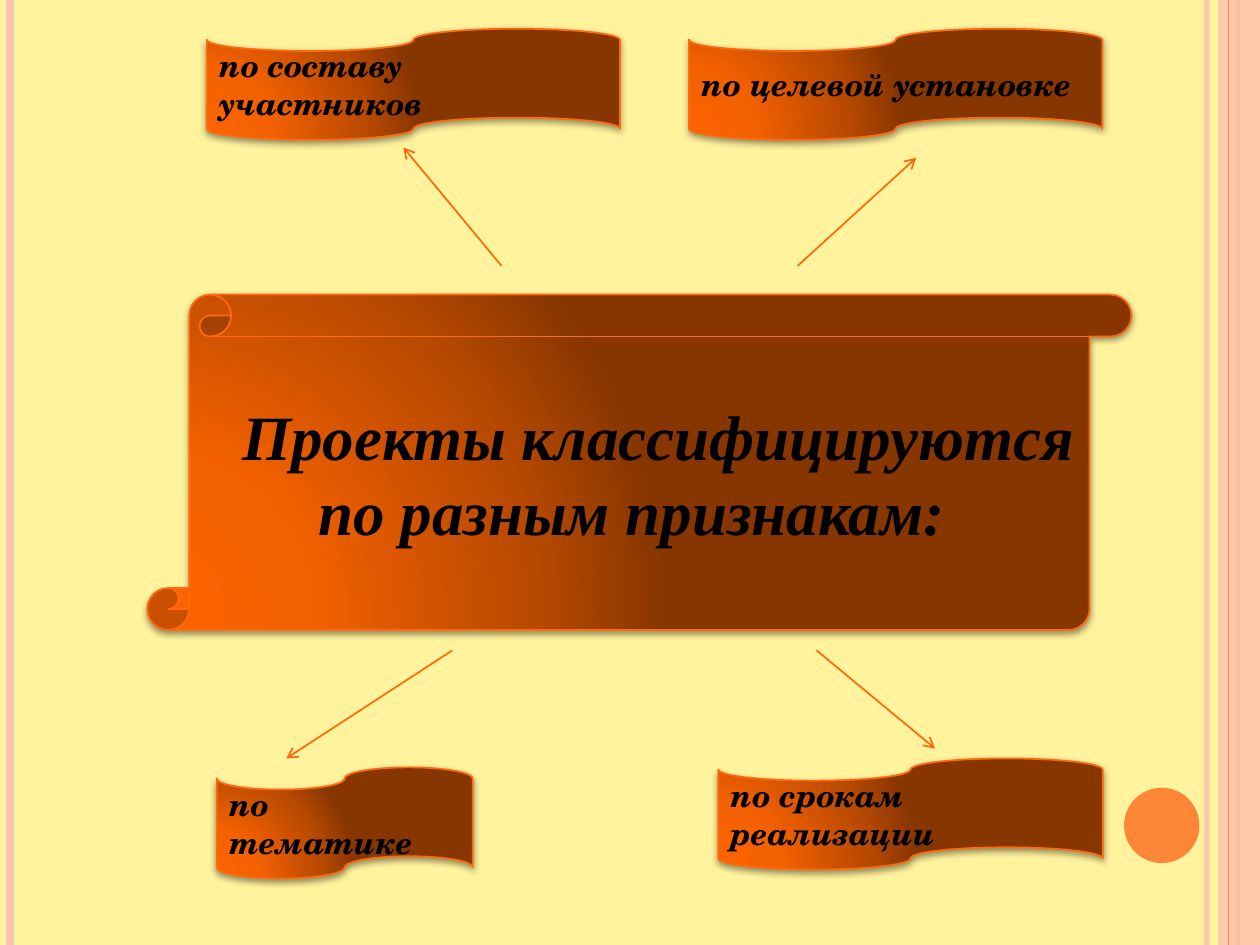
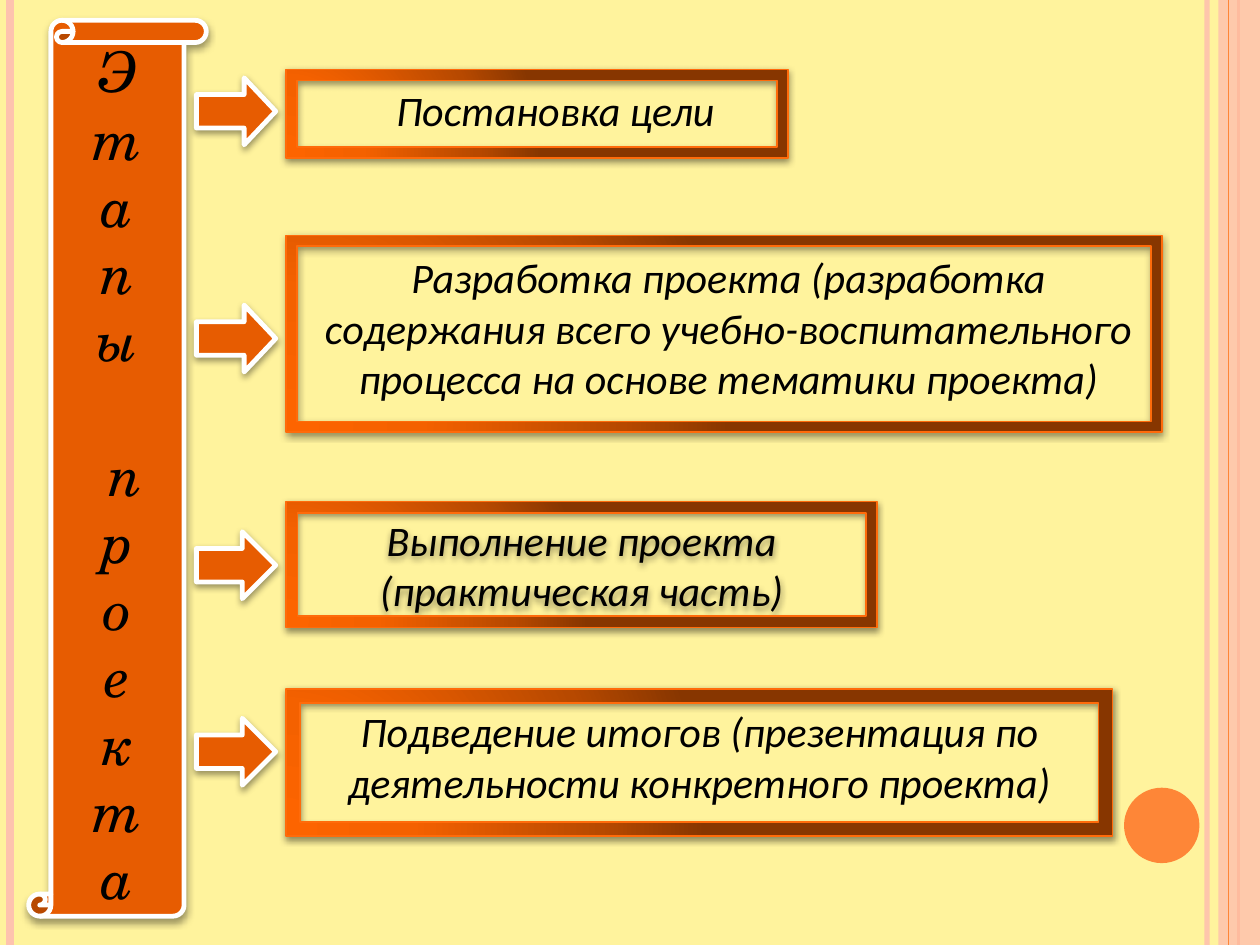
from pptx import Presentation
from pptx.dml.color import RGBColor
from pptx.enum.shapes import MSO_CONNECTOR, MSO_SHAPE
from pptx.enum.text import MSO_ANCHOR, MSO_AUTO_SIZE, PP_ALIGN
from pptx.oxml import parse_xml
from pptx.oxml.ns import nsdecls, qn
from pptx.util import Cm, Pt

LEFT, CENTER = PP_ALIGN.LEFT, PP_ALIGN.CENTER
MIDDLE, GROW = MSO_ANCHOR.MIDDLE, MSO_AUTO_SIZE.SHAPE_TO_FIT_TEXT
STRAIGHT = MSO_CONNECTOR.STRAIGHT
RECT, OVAL, FRAME = MSO_SHAPE.RECTANGLE, MSO_SHAPE.OVAL, MSO_SHAPE.FRAME
SCROLL, TAPE, ARROW = (MSO_SHAPE.VERTICAL_SCROLL, MSO_SHAPE.FLOWCHART_PUNCHED_TAPE,
                       MSO_SHAPE.RIGHT_ARROW)

# Shared look
WIDTH, HEIGHT = 25.4, 19.05
PAPER, PINK, ORANGE = "FFF39D", "FEC3AE", "FE8637"
EDGE, EMBER, WHITE, BLACK = "FF6B0A", "E75C01", "FFFFFF", "000000"
GLOW = [(0, "FD6400"), (30, "F46100"), (75, "B74900"), (100, "873600")]
SCHOOL, TIMES, CALIBRI = "TeX Gyre Schola", "Times New Roman", "Calibri"

# Slide 1: kinds of projects (lengths in cm)
HEADING = "Проекты классифицируются по разным признакам: "
HEADING_BOX = (2.97, 5.94, 19.84, 6.76)
TAPE_HEIGHT = 2.24
CRITERIA = [  # text, left, top, width
    ("по тематике", 4.37, 15.47, 5.16),
    ("по составу участников", 4.17, 0.58, 8.33),
    ("по целевой установке", 13.89, 0.58, 8.33),
    ("по срокам реализации", 14.48, 15.29, 7.75),
]
POINTERS = [  # from x, y to x, y
    (16.46, 13.11, 18.85, 15.09),
    (9.12, 13.11, 5.77, 15.29),
    (16.08, 5.36, 18.47, 3.18),
    (10.11, 5.36, 8.13, 2.97),
]

# Slide 2: stages of a project
BANNER_WORDS = ["Этапы", "проекта"]
BANNER_BOX = (0.58, 0.41, 3.58, 18.06)
ARROW_LEFT, ARROW_SIZE = 3.96, (1.6, 1.35)
FRAME_LEFT = 5.77
STAGES = [  # text, arrow top, arrow head, frame (top, width, height), border, text box
    ("Постановка цели", 1.57, 0.472, (1.4, 10.11, 1.78), 0.125,
     (5.77, 1.57, 10.85, 1.27)),
    ("Разработка проекта (разработка содержания всего учебно-воспитательного "
     "процесса на основе тематики проекта)", 6.15, 0.472, (4.75, 17.65, 3.96), 0.054,
     (6.15, 4.95, 17.07, 3.33)),
    ("Выполнение проекта (практическая часть)", 10.72, 0.5, (10.11, 11.91, 2.54), 0.089,
     None),
    ("Подведение итогов (презентация по деятельности конкретного проекта)",
     14.48, 0.5, (13.89, 16.66, 2.97), 0.095, (5.77, 14.1, 16.66, 2.31)),
]


def rgb(color):
    return RGBColor.from_string(color)


def set_alpha(sp, percent):
    for clr in sp._element.spPr.iter(qn("a:srgbClr")):
        clr.append(parse_xml(f'<a:alpha {nsdecls("a")} val="{percent * 1000}"/>'))


def add_shadow(sp, alpha, dist):
    sp._element.spPr.append(parse_xml(
        f'<a:effectLst {nsdecls("a")}><a:outerShdw blurRad="{Pt(4)}" dist="{Pt(dist)}" '
        f'dir="5400000" rotWithShape="0"><a:srgbClr val="{BLACK}">'
        f'<a:alpha val="{alpha * 1000}"/></a:srgbClr></a:outerShdw></a:effectLst>'))


def add_shape(s, kind, box, fill, line=None, width=1.0):
    sp = s.shapes.add_shape(kind, *map(Cm, box))
    sp.fill.solid()
    sp.fill.fore_color.rgb = rgb(fill)
    if line:
        sp.line.color.rgb = rgb(line)
        sp.line.width = Pt(width)
    else:
        sp.line.fill.background()
        sp.shadow.inherit = False
    return sp


def add_glowing(s, kind, box):
    """Shape with the dark orange radial gradient and a soft shadow."""
    sp = add_shape(s, kind, box, EMBER, EDGE)
    stops = "".join(f'<a:gs pos="{pos * 1000}"><a:srgbClr val="{c}"/></a:gs>'
                    for pos, c in GLOW)
    spPr = sp._element.spPr
    spPr.replace(spPr.find(qn("a:solidFill")), parse_xml(
        f'<a:gradFill {nsdecls("a")} rotWithShape="1"><a:gsLst>{stops}</a:gsLst>'
        '<a:path path="circle"><a:fillToRect l="5000" t="100000" r="120000" b="10000"/>'
        '</a:path></a:gradFill>'))
    add_shadow(sp, 42, 1.6)
    return sp


def add_outlined(s, kind, box):
    """Flat orange shape with a thick white edge."""
    sp = add_shape(s, kind, box, EMBER, WHITE, 2.75)
    add_shadow(sp, 40, 2)
    return sp


def add_line(s, x1, y1, x2, y2, color, width, arrow=False):
    cn = s.shapes.add_connector(STRAIGHT, *map(Cm, (x1, y1, x2, y2)))
    cn.line.color.rgb = rgb(color)
    cn.line.width = Pt(width)
    if arrow:
        cn.line._ln.append(parse_xml(f'<a:tailEnd {nsdecls("a")} type="arrow"/>'))
    cn._element.spPr.append(parse_xml(f'<a:effectLst {nsdecls("a")}/>'))
    return cn


def write(sp, paragraphs, font, size, align=CENTER, bold=False):
    tf = sp.text_frame
    tf.word_wrap = True
    for i, text in enumerate(paragraphs):
        p = tf.add_paragraph() if i else tf.paragraphs[0]
        p.alignment = align
        r = p.add_run()
        r.text = text
        r.font.name, r.font.size = font, Pt(size)
        r.font.bold, r.font.italic = bold, True
        r.font.color.rgb = rgb(BLACK)
    return tf


def decorate_master(prs, s):
    """Draw the side stripes and disc, then hand them to the slide master."""
    def stripe(x, color, width):
        return add_line(s, x, 0, x, HEIGHT, color, width)

    prs.slide_master.background.fill.solid()
    prs.slide_master.background.fill.fore_color.rgb = rgb(PAPER)
    inner = stripe(24.33, PINK, 3)
    set_alpha(inner, 93)
    parts = [inner, stripe(0.2, PINK, 4.5), stripe(24.97, ORANGE, 1.5)]
    band = add_shape(s, RECT, (24.56, 0, WIDTH - 24.56, HEIGHT), PINK)
    set_alpha(band, 87)
    parts += [band, stripe(24.77, ORANGE, 0.75),
              add_shape(s, OVAL, (22.66, 15.88, 1.52, 1.52), ORANGE)]
    for i, part in enumerate(parts):
        next(part._element.iter(qn("p:cNvPr"))).set("id", str(100 + i))
        prs.slide_master.shapes._spTree.append(part._element)


def build_criteria(s):
    # Central scroll
    sp = add_glowing(s, SCROLL, HEADING_BOX)
    tf = write(sp, [HEADING], TIMES, 36, bold=True)
    tf.vertical_anchor = MIDDLE
    tf.paragraphs[0]._p.get_or_add_pPr().set("indent", str(Cm(0.76)))
    # Pointers and tapes
    for ends in POINTERS:
        add_line(s, *ends, EDGE, 1, arrow=True)
    for text, left, top, width in CRITERIA:
        sp = add_glowing(s, TAPE, (left, top, width, TAPE_HEIGHT))
        write(sp, [text], SCHOOL, 18, LEFT, bold=True).vertical_anchor = MIDDLE


def build_stages(s):
    # Upright banner, one letter a line, a line's gap between the words
    first, second = BANNER_WORDS
    letters = list(first) + [" " + second[0]] + list(second[1:])
    sp = add_outlined(s, SCROLL, BANNER_BOX)
    tf = write(sp, letters, SCHOOL, 32)
    tf.vertical_anchor = MIDDLE
    tf.paragraphs[len(first)].space_before = Pt(38.5)
    # Arrows
    for _, top, head, *_ in STAGES:
        sp = add_outlined(s, ARROW, (ARROW_LEFT, top, *ARROW_SIZE))
        sp.adjustments[1] = head
    # Frames with their texts
    for text, _, _, frame, border, text_box in STAGES:
        sp = add_glowing(s, FRAME, (FRAME_LEFT, *frame))
        sp.adjustments[0] = border
        if text_box:
            sp = s.shapes.add_textbox(*map(Cm, text_box))
            write(sp, [text], CALIBRI, 24).auto_size = GROW
        else:
            write(sp, [text], CALIBRI, 24).vertical_anchor = MIDDLE


def main():
    prs = Presentation()
    prs.slide_width, prs.slide_height = Cm(WIDTH), Cm(HEIGHT)
    slides = [prs.slides.add_slide(prs.slide_layouts[6]) for _ in range(2)]
    decorate_master(prs, slides[0])
    build_criteria(slides[0])
    build_stages(slides[1])
    prs.save("out.pptx")


if __name__ == "__main__":
    main()
